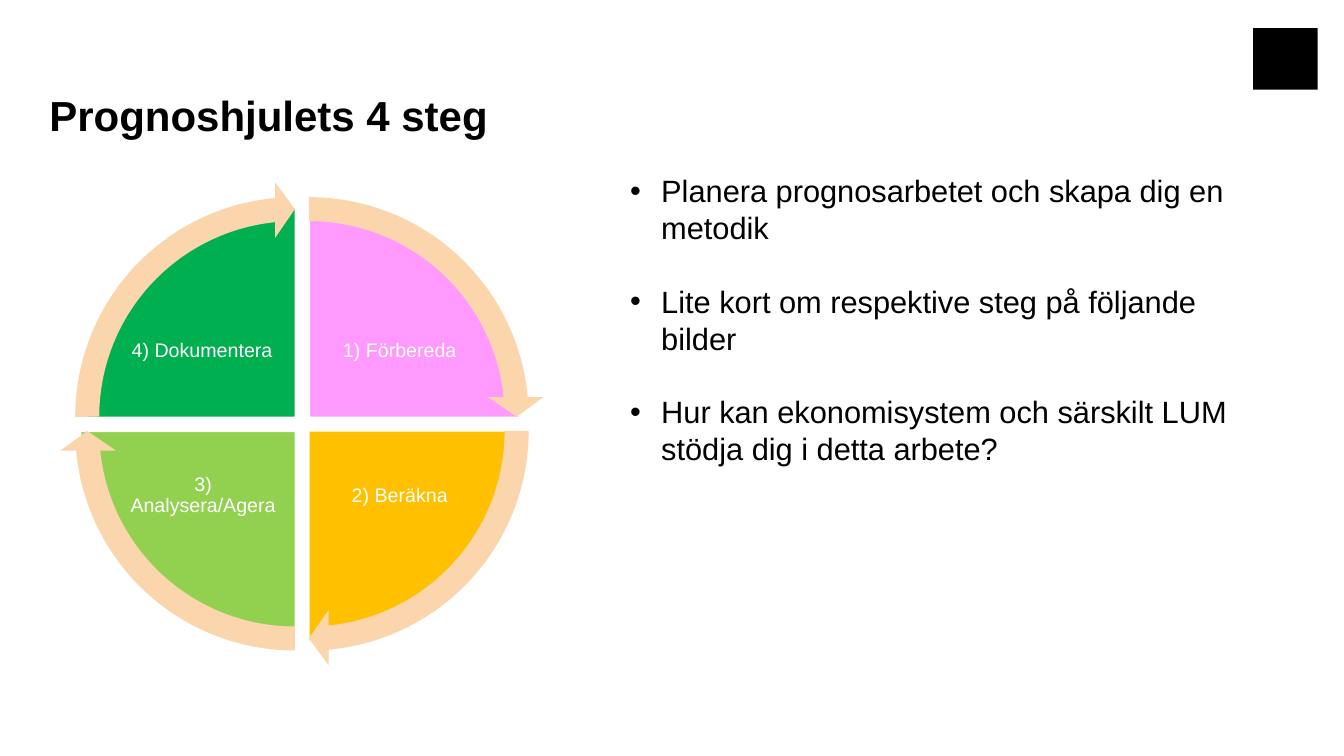
import pptx
import pptx.dml.color
import pptx.enum.shapes
import pptx.enum.text
import pptx.util
from lxml import etree

Inches = pptx.util.Inches
Pt = pptx.util.Pt
RGB = pptx.dml.color.RGBColor.from_string
MSO_SHAPE = pptx.enum.shapes.MSO_SHAPE
ANCHOR = pptx.enum.text.MSO_ANCHOR
ALIGN = pptx.enum.text.PP_ALIGN

THEME = {
    "font": "Arial",
    "text": "000000",
    "label": "FFFFFF",
    "arrow": "FBD5AB",
    "steps": ["FF99FF", "FFC000", "92D050", "00B050"],
    "title_size": 30,
    "body_size": 22,
    "label_size": 14,
}


def add_run(p, text, size, color, bold=False):
    r = p.add_run()
    r.text = text
    r.font.name = THEME["font"]
    r.font.size = Pt(THEME[size])
    r.font.bold = bold
    r.font.color.rgb = RGB(THEME[color])


def add_filled(kind, box, color, adjustments=()):
    sp = s.shapes.add_shape(kind, *map(Inches, box))
    sp.shadow.inherit = False
    sp.fill.solid()
    sp.fill.fore_color.rgb = RGB(color)
    sp.line.fill.background()
    for i, value in enumerate(adjustments):
        sp.adjustments[i] = value
    return sp


prs = pptx.Presentation()
prs.slide_width = Inches(13.33)
prs.slide_height = Inches(7.5)
s = prs.slides.add_slide(prs.slide_layouts[5])

add_filled(MSO_SHAPE.RECTANGLE, (12.43, 0.28, 0.64, 0.61), THEME["text"])

title = s.shapes.title
title.left, title.top = Inches(0.49), Inches(0.3)
title.width, title.height = Inches(10.67), Inches(1.1)
tf = title.text_frame
tf.margin_left = tf.margin_right = tf.margin_top = tf.margin_bottom = 0
tf.vertical_anchor = ANCHOR.BOTTOM
p = tf.paragraphs[0]
p.alignment = ALIGN.LEFT
p.line_spacing = 0.9
add_run(p, "Prognoshjulets 4 steg", "title_size", "text", True)

QUARTER, FULL, HEAD = 54, 216, 3.275
steps = [
    ("1) Förbereda", (0.99, 2.06, 4.16, 4.16), (3.19, 2.91), (0.73, 1.8)),
    ("2) Beräkna", (0.98, 2.19, 4.17, 4.17), (3.19, 4.35), (0.73, 1.94)),
    ("3) Analysera/Agera", (0.8, 2.2, 4.26, 4.16), (1.24, 4.35), (0.59, 1.94)),
    ("4) Dokumentera", (0.85, 2.06, 4.16, 4.16), (1.23, 2.91), (0.59, 1.8)),
]
starts = [(i - 1) * QUARTER % FULL for i in range(len(steps))]

for start, color, (label, pie_box, label_at, _) in zip(starts, THEME["steps"], steps):
    pie = add_filled(MSO_SHAPE.PIE, pie_box, color, (start, (start + QUARTER) % FULL))
    pie.line.color.rgb = RGB(THEME["label"])
    pie.line.width = Pt(1)

    tb = s.shapes.add_textbox(*map(Inches, (*label_at, 1.55, 1.14)))
    tf = tb.text_frame
    tf.word_wrap = True
    tf.vertical_anchor = ANCHOR.MIDDLE
    tf.margin_left = tf.margin_right = tf.margin_top = tf.margin_bottom = Inches(0.02)
    p = tf.paragraphs[0]
    p.alignment = ALIGN.CENTER
    p.line_spacing = 0.9
    add_run(p, label, "label_size", "label")

for start, (_, _, _, arrow_at) in zip(starts, steps):
    tip = (start + QUARTER - HEAD) % FULL
    add_filled(MSO_SHAPE.CIRCULAR_ARROW, (*arrow_at, 4.67, 4.67), THEME["arrow"],
               (0.051, HEAD, tip, start, 0.059))

tb = s.shapes.add_textbox(Inches(6.15), Inches(1.66), Inches(6.52), Inches(3.06))
tf = tb.text_frame
tf.word_wrap = True
points = [
    "Planera prognosarbetet och skapa dig en metodik",
    "Lite kort om respektive steg på följande bilder",
    "Hur kan ekonomisystem och särskilt LUM stödja dig i detta arbete?",
]
for i, point in enumerate(points):
    p = tf.add_paragraph() if i else tf.paragraphs[0]
    p.line_spacing = Pt(26.3)
    if i:
        p.space_before = Pt(26.3)
    pPr = p._p.get_or_add_pPr()
    pPr.set("marL", str(Inches(0.31)))
    pPr.set("indent", str(-Inches(0.31)))
    for tag, key, value in (("a:buFont", "typeface", THEME["font"]), ("a:buChar", "char", "•")):
        etree.SubElement(pPr, pptx.oxml.ns.qn(tag)).set(key, value)
    add_run(p, point, "body_size", "text")

prs.save("out.pptx")
